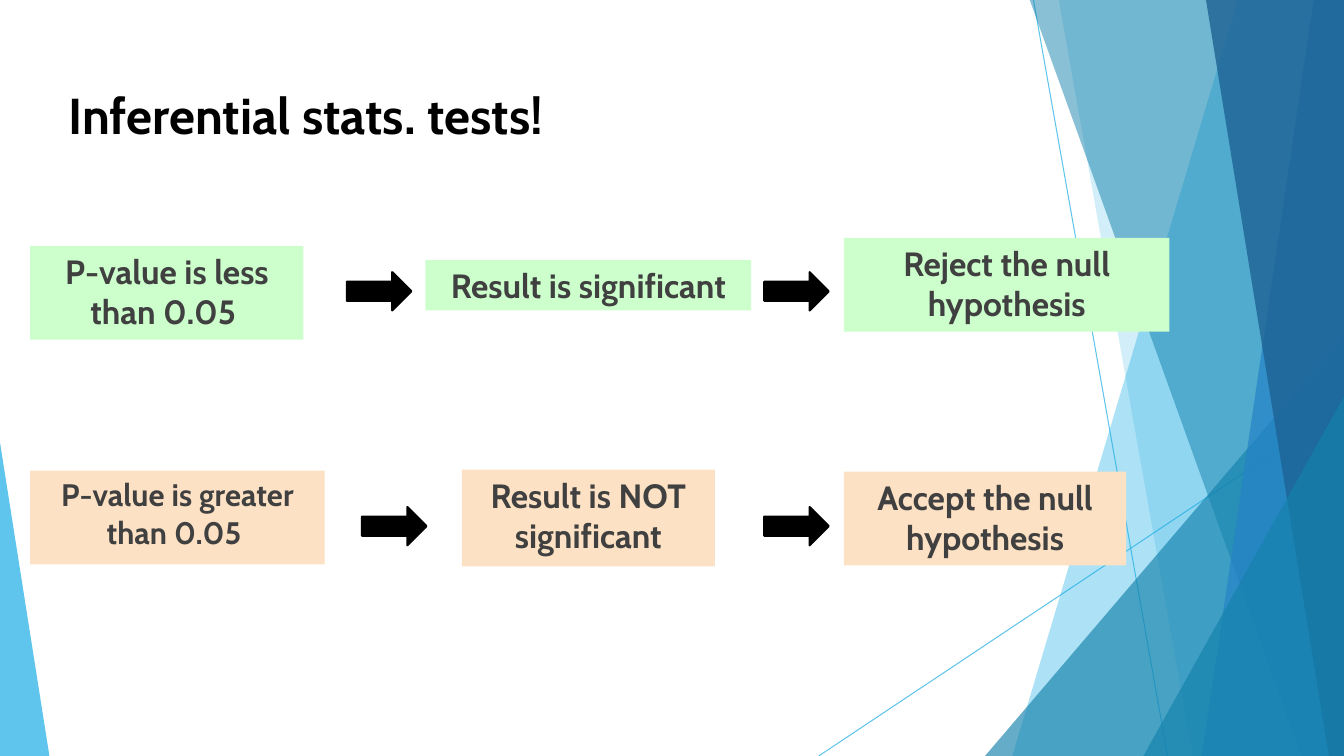
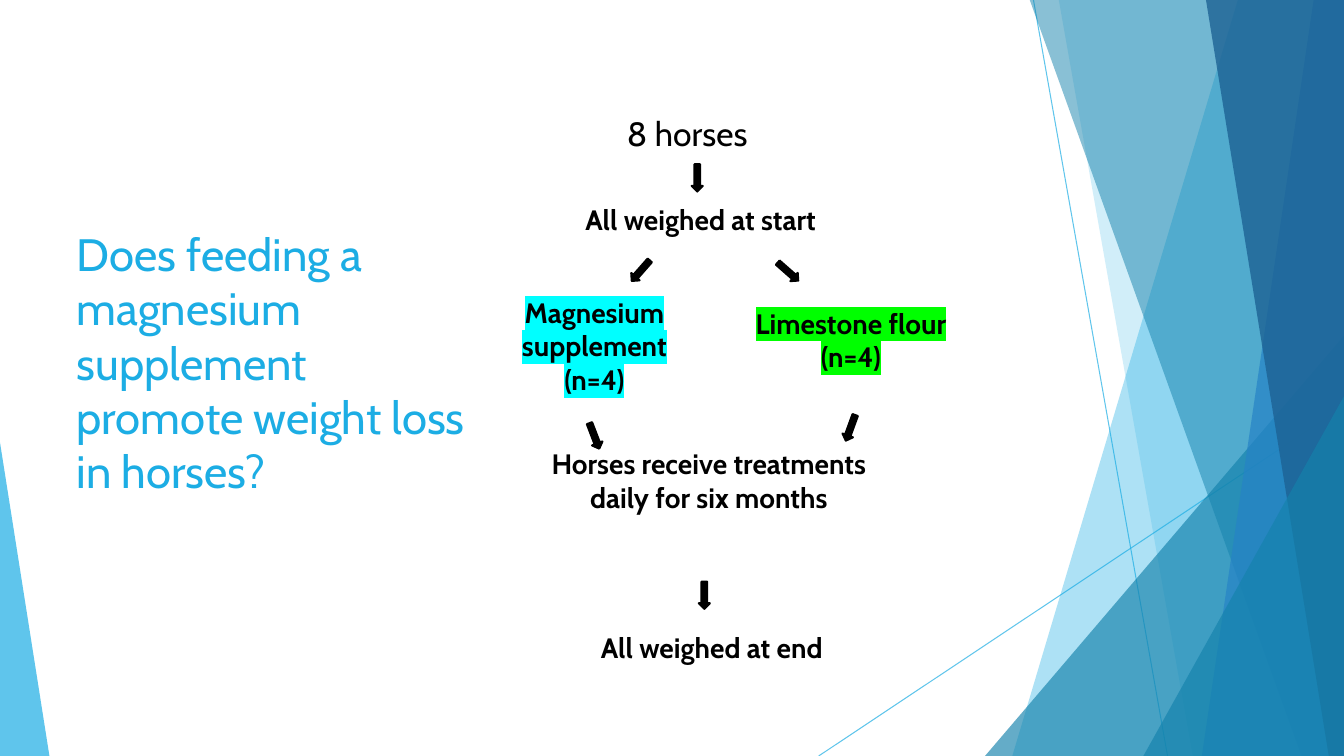
"""Build two slides on inferential tests and a feeding trial with shared facet bands."""
from dataclasses import dataclass
from typing import Any, Optional, Union

from lxml import etree
from pptx import Presentation
from pptx.dml.color import RGBColor
from pptx.enum.shapes import MSO_CONNECTOR, MSO_SHAPE
from pptx.enum.text import MSO_ANCHOR, MSO_AUTO_SIZE, PP_ALIGN
from pptx.oxml.ns import qn
from pptx.util import Inches, Pt

RECTANGLE = MSO_SHAPE.RECTANGLE
TRIANGLE = MSO_SHAPE.ISOSCELES_TRIANGLE
RIGHT_ARROW = MSO_SHAPE.RIGHT_ARROW
STRAIGHT = MSO_CONNECTOR.STRAIGHT
TOP = MSO_ANCHOR.TOP
NO_AUTOFIT = MSO_AUTO_SIZE.NONE
LEFT, CENTER = PP_ALIGN.LEFT, PP_ALIGN.CENTER

SLIDE_WIDTH, SLIDE_HEIGHT = 13.33, 7.5
TITLE_AND_CONTENT, TITLE_ONLY = 1, 5


@dataclass(frozen=True)
class Theme:
    font: str = "Cabin"
    black: str = "000000"
    gray: str = "404040"
    sky: str = "1CADE4"
    teal: str = "1482AC"
    blue: str = "2683C6"
    navy: str = "1D6294"
    mint: str = "CCFFCC"
    peach: str = "FCE1C4"
    cyan: str = "00FFFF"
    lime: str = "00FF00"
    title_size: float = 36
    question_size: float = 32.4
    large_size: float = 24
    reduced_size: float = 22.2
    step_size: float = 20


THEME = Theme()


@dataclass(frozen=True)
class TextStyle:
    size: float
    color: str = THEME.black
    bold: bool = True
    align: Any = CENTER


@dataclass(frozen=True)
class Box:
    left: float
    top: float
    width: float
    height: float


@dataclass(frozen=True)
class Ray:
    start: tuple[float, float]
    end: tuple[float, float]
    color: str = THEME.sky
    opacity: int = 70


@dataclass(frozen=True)
class Facet:
    top_x: float
    bottom_x: float
    color: str
    opacity: int


@dataclass(frozen=True)
class Wedge:
    left: float
    top: float
    width: float
    peak: float
    color: str
    opacity: int


@dataclass(frozen=True)
class Statement:
    text: str
    box: Box
    fill: str
    size: float = THEME.large_size


@dataclass(frozen=True)
class Step:
    lines: tuple[str, ...]
    box: Box
    highlight: Optional[str] = None
    style: TextStyle = TextStyle(THEME.step_size)


@dataclass(frozen=True)
class Arrow:
    left: float
    top: float
    width: float = 0.27
    height: float = 0.11
    rotation: float = 0


Band = Union[Ray, Facet, Wedge]

BANDS: tuple[Band, ...] = (
    Ray((10.25, 0), (11.58, SLIDE_HEIGHT)),
    Ray((SLIDE_WIDTH, 4.03), (8.12, SLIDE_HEIGHT)),
    Facet(12.28, 10.04, THEME.sky, 36),
    Facet(10.5, 11.83, THEME.sky, 20),
    Wedge(9.77, 3.33, 3.56, 1, THEME.teal, 66),
    Facet(10.21, 12.91, THEME.teal, 50),
    Facet(13.03, 11.92, THEME.blue, 70),
    Facet(11.96, 13.18, THEME.navy, 80),
    Wedge(11.34, 3.93, 1.99, 1, THEME.teal, 66),
    Wedge(0, 4.39, 0.49, 0, THEME.sky, 70),
)

FIRST_STATEMENT = Statement("P-value is less than 0.05 ", Box(0.3, 2.44, 2.71, 0.93), THEME.mint)
STATEMENTS = (
    Statement("Result is significant", Box(4.22, 2.58, 3.23, 0.5), THEME.mint),
    Statement("Reject the null hypothesis", Box(8.37, 2.36, 3.23, 0.93), THEME.mint),
    Statement("P-value is greater than 0.05 ", Box(0.3, 4.67, 2.92, 0.93), THEME.peach,
              THEME.reduced_size),
    Statement("Result is NOT significant", Box(4.58, 4.66, 2.51, 0.96), THEME.peach),
    Statement("Accept the null hypothesis", Box(8.37, 4.68, 2.8, 0.93), THEME.peach),
)
TEST_ARROWS = tuple(
    Arrow(left, top, 0.64, 0.38)
    for left, top in ((3.44, 2.7), (7.58, 2.7), (3.59, 5.03), (7.58, 5.03))
)

STEPS = (
    Step(("8 horses",), Box(6.12, 1.07, 1.77, 0.5),
         style=TextStyle(THEME.large_size, bold=False, align=LEFT)),
    Step(("All weighed at start",), Box(5.48, 1.96, 2.94, 0.44)),
    Step(("Magnesium supplement (n=4)",), Box(4.8, 2.88, 2.19, 1.11), THEME.cyan),
    Step(("Limestone flour", "(n=4)"), Box(6.73, 2.99, 3.42, 0.77), THEME.lime),
    Step(("Horses receive treatments daily for six months",), Box(5.32, 4.38, 3.42, 1.11)),
    Step(("All weighed at end",), Box(5.59, 6.21, 2.94, 0.44)),
)
TRIAL_ARROWS = (
    Arrow(6.78, 1.71, rotation=90),
    Arrow(6.22, 2.63, rotation=131.3),
    Arrow(7.68, 2.64, rotation=41.3),
    Arrow(5.76, 4.27, rotation=69),
    Arrow(8.3, 4.19, rotation=110.1),
    Arrow(6.85, 5.85, rotation=90),
)


def color_of(value: str) -> RGBColor:
    """Return the colour object for a hex value."""
    return RGBColor.from_string(value)


def set_opacity(shape: Any, percent: int) -> None:
    """Make every colour of a shape partly transparent."""
    for color in shape.element.spPr.iter(qn("a:srgbClr")):
        etree.SubElement(color, qn("a:alpha")).set("val", str(percent * 1000))


def paint(shape: Any, fill: str, outline: Optional[str] = None) -> None:
    """Give a shape a flat fill, an optional outline and no shadow."""
    shape.shadow.inherit = False
    shape.fill.solid()
    shape.fill.fore_color.rgb = color_of(fill)
    if outline is None:
        shape.line.fill.background()
    else:
        shape.line.color.rgb = color_of(outline)
        shape.line.width = Pt(1.5)


def place(shape: Any, box: Box) -> None:
    """Move and size a shape to a box."""
    shape.left, shape.top = Inches(box.left), Inches(box.top)
    shape.width, shape.height = Inches(box.width), Inches(box.height)


def write(shape: Any, lines: tuple[str, ...], style: TextStyle,
          highlight: Optional[str] = None) -> None:
    """Write one unbulleted paragraph per line."""
    frame = shape.text_frame
    frame.word_wrap = True
    frame.auto_size = NO_AUTOFIT
    frame.vertical_anchor = TOP
    for index, line in enumerate(lines):
        paragraph = frame.add_paragraph() if index else frame.paragraphs[0]
        run = paragraph.add_run()
        run.text = line
        paragraph.alignment = style.align
        paragraph.space_before = Pt(0)
        properties = paragraph._p.get_or_add_pPr()
        properties.set("marL", "0")
        properties.set("indent", "0")
        etree.SubElement(properties, qn("a:buNone"))
        font = paragraph.font
        font.name, font.size, font.bold = THEME.font, Pt(style.size), style.bold
        font.color.rgb = color_of(style.color)
        if highlight:
            marker = etree.SubElement(run._r.get_or_add_rPr(), qn("a:highlight"))
            etree.SubElement(marker, qn("a:srgbClr")).set("val", highlight)


def draw_band(slide: Any, band: Band) -> Any:
    """Draw one ray, facet or wedge of the backdrop."""
    if isinstance(band, Ray):
        points = [Inches(value) for value in (*band.start, *band.end)]
        shape = slide.shapes.add_connector(STRAIGHT, *points)
        shape.line.color.rgb = color_of(band.color)
        shape.line.width = Pt(0.75)
        etree.SubElement(shape.element.spPr, qn("a:effectLst"))
    elif isinstance(band, Facet):
        top, bottom = Inches(-0.01), Inches(SLIDE_HEIGHT)
        right = Inches(SLIDE_WIDTH)
        builder = slide.shapes.build_freeform(Inches(band.top_x), top)
        builder.add_line_segments(
            [(right, top), (right, bottom), (Inches(band.bottom_x), bottom)], close=True)
        shape = builder.convert_to_shape()
        paint(shape, band.color)
    else:
        shape = slide.shapes.add_shape(
            TRIANGLE, Inches(band.left), Inches(band.top),
            Inches(band.width), Inches(SLIDE_HEIGHT - band.top))
        shape.adjustments[0] = band.peak
        paint(shape, band.color)
    set_opacity(shape, band.opacity)
    return shape


def add_backdrop(presentation: Any, slide: Any) -> None:
    """Draw the bands and move them to the slide master."""
    tree = presentation.slide_master.element.cSld.spTree
    for band in BANDS:
        tree.append(draw_band(slide, band).element)


def draw_arrow(slide: Any, arrow: Arrow) -> None:
    """Draw a black block arrow."""
    shape = slide.shapes.add_shape(
        RIGHT_ARROW, Inches(arrow.left), Inches(arrow.top),
        Inches(arrow.width), Inches(arrow.height))
    shape.rotation = arrow.rotation
    paint(shape, THEME.black, THEME.black)


def fill_title(slide: Any, text: str, box: Box, style: TextStyle) -> None:
    """Place and write the slide title."""
    place(slide.shapes.title, box)
    write(slide.shapes.title, (text,), style)


def fill_statement(shape: Any, statement: Statement) -> None:
    """Place, colour and write one statement."""
    place(shape, statement.box)
    shape.fill.solid()
    shape.fill.fore_color.rgb = color_of(statement.fill)
    write(shape, (statement.text,), TextStyle(statement.size, THEME.gray))


def build_tests_slide(slide: Any) -> None:
    """Show how the p-value leads to a decision."""
    fill_title(slide, "Inferential stats. tests!", Box(0.58, 0.78, 9.4, 0.83),
               TextStyle(THEME.title_size, align=LEFT))
    fill_statement(slide.placeholders[1], FIRST_STATEMENT)
    for statement in STATEMENTS:
        shape = slide.shapes.add_shape(RECTANGLE, 0, 0, 0, 0)
        paint(shape, statement.fill)
        fill_statement(shape, statement)
    for arrow in TEST_ARROWS:
        draw_arrow(slide, arrow)


def build_trial_slide(slide: Any) -> None:
    """Show the steps of the feeding trial."""
    fill_title(slide, "Does feeding a magnesium supplement promote weight loss in horses?",
               Box(0.66, 2.19, 4.14, 2.85),
               TextStyle(THEME.question_size, THEME.sky, bold=False, align=LEFT))
    for step in STEPS:
        shape = slide.shapes.add_textbox(0, 0, 0, 0)
        place(shape, step.box)
        write(shape, step.lines, step.style, step.highlight)
    for arrow in TRIAL_ARROWS:
        draw_arrow(slide, arrow)


def main() -> None:
    """Build and save the presentation."""
    presentation = Presentation()
    presentation.slide_width = Inches(SLIDE_WIDTH)
    presentation.slide_height = Inches(SLIDE_HEIGHT)
    layouts = presentation.slide_layouts
    tests_slide = presentation.slides.add_slide(layouts[TITLE_AND_CONTENT])
    add_backdrop(presentation, tests_slide)
    build_tests_slide(tests_slide)
    build_trial_slide(presentation.slides.add_slide(layouts[TITLE_ONLY]))
    presentation.save("out.pptx")


if __name__ == "__main__":
    main()
